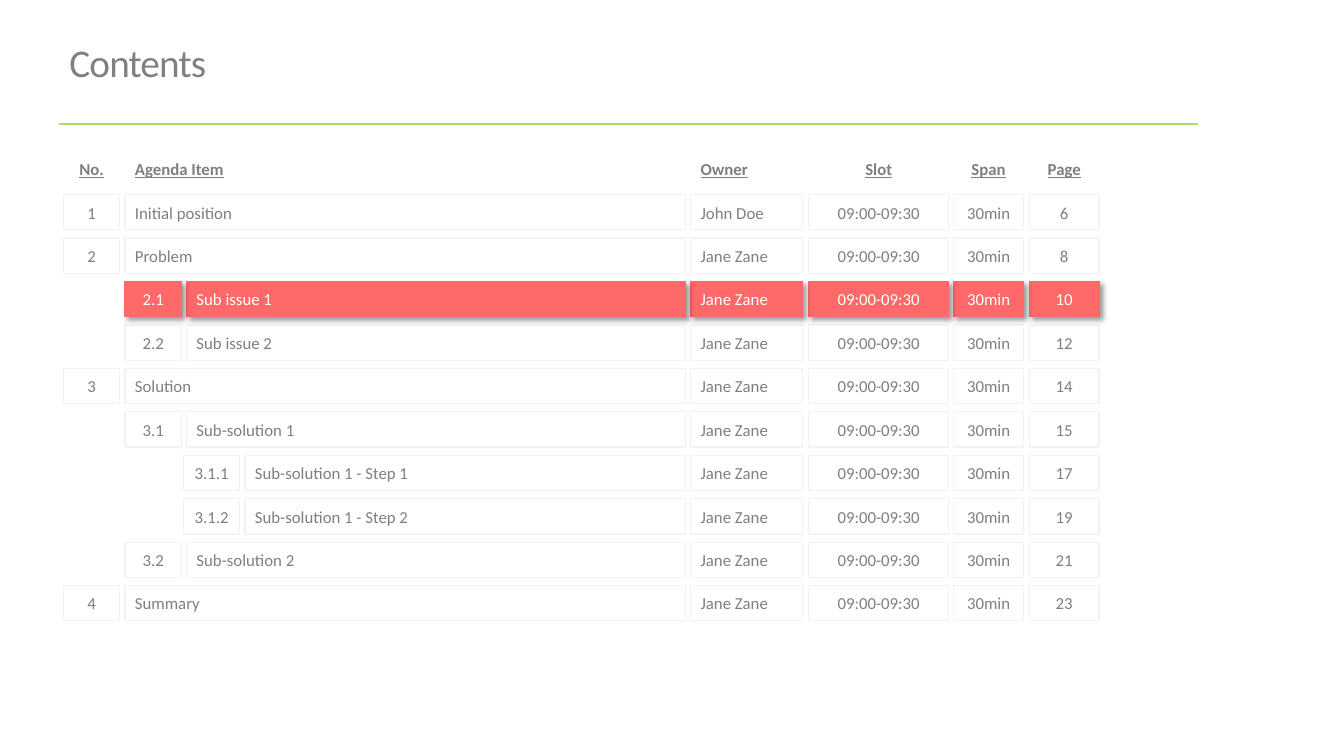
import pptx
import pptx.util
import pptx.dml.color
import pptx.enum.shapes
import pptx.enum.text
import pptx.oxml
import pptx.oxml.ns
from pptx.util import Inches

COLORS = {"text": "7F7F7F", "title": "808080", "rule": "B4DC64",
          "border": "F2F2F2", "highlight": "FF6969", "white": "FFFFFF"}
FONT = "Calibri"
ALIGN = pptx.enum.text.PP_ALIGN

TOP, PITCH, ROW_HEIGHT = 1.5, 0.431, 0.35
NUMBER_LEFTS = [0.63, 1.24, 1.82]  # one per outline level
NUMBER_WIDTH, ITEM_OFFSET, ITEM_RIGHT = 0.56, 0.61, 6.8
# left, width, alignment of the owner, slot, span and page columns
DETAIL_COLUMNS = [(6.85, 1.11, ALIGN.LEFT), (8.02, 1.39, ALIGN.CENTER),
                  (9.46, 0.69, ALIGN.CENTER), (10.21, 0.69, ALIGN.CENTER)]

HEADER = ("No.", "Agenda Item", "Owner", "Slot", "Span", "Page")
SLOT, SPAN = "09:00-09:30", "30min"
AGENDA = [
    ("1", "Initial position", "John Doe", "6"),
    ("2", "Problem", "Jane Zane", "8"),
    ("2.1", "Sub issue 1", "Jane Zane", "10"),
    ("2.2", "Sub issue 2", "Jane Zane", "12"),
    ("3", "Solution", "Jane Zane", "14"),
    ("3.1", "Sub-solution 1", "Jane Zane", "15"),
    ("3.1.1", "Sub-solution 1 - Step 1", "Jane Zane", "17"),
    ("3.1.2", "Sub-solution 1 - Step 2", "Jane Zane", "19"),
    ("3.2", "Sub-solution 2", "Jane Zane", "21"),
    ("4", "Summary", "Jane Zane", "23"),
]
CURRENT = "2.1"


def rgb(name):
    return pptx.dml.color.RGBColor.from_string(COLORS[name])


def set_text(sp, text, size, color, align=ALIGN.LEFT):
    tf = sp.text_frame
    tf.word_wrap = True
    tf.vertical_anchor = pptx.enum.text.MSO_ANCHOR.MIDDLE
    p = tf.paragraphs[0]
    p.text = text
    p.alignment = align
    r = p.runs[0]
    r.font.name = FONT
    r.font.size = pptx.util.Pt(size)
    r.font.color.rgb = rgb(color)
    return r


def add_drop_shadow(sp):
    effects = sp._element.spPr.find(pptx.oxml.ns.qn("a:effectLst"))
    effects.append(pptx.oxml.parse_xml(
        f'<a:outerShdw {pptx.oxml.ns.nsdecls("a")} blurRad="{pptx.util.Pt(4)}" '
        f'dist="{pptx.util.Pt(3)}" dir="2700000" algn="tl" rotWithShape="0">'
        '<a:srgbClr val="000000"><a:alpha val="40000"/></a:srgbClr></a:outerShdw>'))


def add_box(slide, box, highlighted):
    sp = slide.shapes.add_shape(pptx.enum.shapes.MSO_SHAPE.RECTANGLE, *box)
    sp.shadow.inherit = False
    sp.line.width = pptx.util.Pt(0.85)
    sp.line.color.rgb = rgb("highlight" if highlighted else "border")
    if highlighted:
        sp.fill.solid()
        sp.fill.fore_color.rgb = rgb("highlight")
        add_drop_shadow(sp)
    else:
        sp.fill.background()
    return sp


def add_row(slide, index, values, header=False):
    """Lay out one agenda row; the dots in its number give the indent level."""
    number = values[0]
    highlighted = number == CURRENT
    number_left = NUMBER_LEFTS[0 if header else number.count(".")]
    item_left = number_left + ITEM_OFFSET
    columns = [(number_left, NUMBER_WIDTH, ALIGN.CENTER),
               (item_left, ITEM_RIGHT - item_left, ALIGN.LEFT)] + DETAIL_COLUMNS
    # Right to left, so that each shadow falls on the box to its right
    for col, (left, width, align) in reversed(list(enumerate(columns))):
        box = [Inches(v) for v in (left, TOP + index * PITCH, width, ROW_HEIGHT)]
        if header:
            sp = slide.shapes.add_textbox(*box)
        else:
            sp = add_box(slide, box, highlighted)
        r = set_text(sp, values[col], 12, "white" if highlighted else "text", align)
        if header:
            r.font.bold = r.font.underline = True
        if col == 0:
            tf = sp.text_frame
            tf.word_wrap = False
            tf.margin_left = tf.margin_right = tf.margin_top = tf.margin_bottom = 0


def add_title(slide, text):
    sp = slide.shapes.add_textbox(Inches(0.59), Inches(0.18), Inches(11.25), Inches(0.93))
    r = set_text(sp, text, 28, "title")
    r.font._element.set("spc", "-60")
    sp.text_frame.paragraphs[0].line_spacing = 0.9


def add_rule(slide):
    line = slide.shapes.add_connector(pptx.enum.shapes.MSO_CONNECTOR.STRAIGHT,
                                      Inches(0.59), Inches(1.23), Inches(11.88), Inches(1.23))
    line.line.color.rgb = rgb("rule")
    line.line.width = pptx.util.Pt(2)
    line._element.spPr.append(pptx.oxml.parse_xml(
        f'<a:effectLst {pptx.oxml.ns.nsdecls("a")}/>'))


def main():
    prs = pptx.Presentation()
    prs.slide_width, prs.slide_height = Inches(13.33), Inches(7.5)
    slide = prs.slides.add_slide(prs.slide_layouts[6])
    add_rule(slide)
    for index, (number, item, owner, page) in reversed(list(enumerate(AGENDA, 1))):
        add_row(slide, index, (number, item, owner, SLOT, SPAN, page))
    add_row(slide, 0, HEADER, header=True)
    add_title(slide, "Contents")
    prs.save("out.pptx")


if __name__ == "__main__":
    main()
